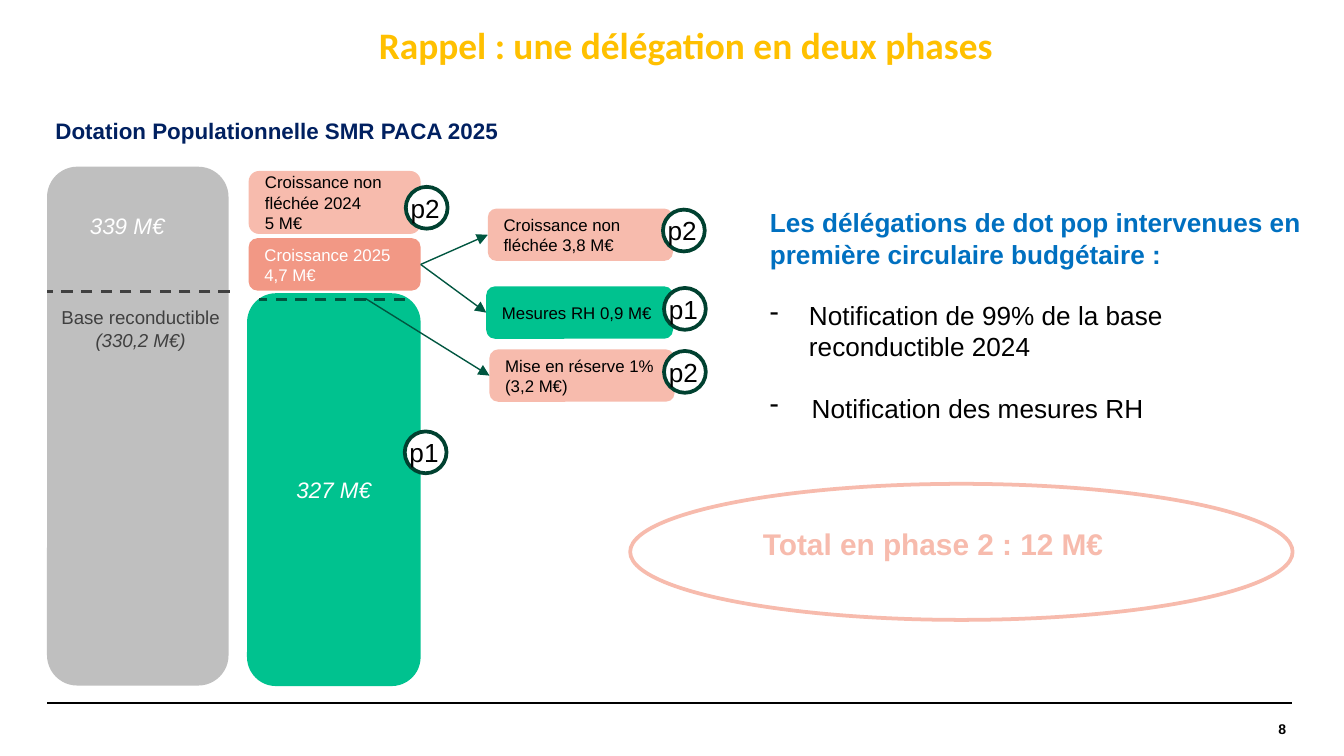
from lxml import etree
from pptx import Presentation
from pptx.dml.color import RGBColor
from pptx.enum import dml, shapes, text
from pptx.oxml.ns import qn
from pptx.util import Cm, Pt

THEME = {
    "grey": "BFBFBF", "green": "00C28F", "coral": "F29885", "salmon": "F7BBAD",
    "white": "FFFFFF", "black": "000000", "dark": "404040", "gold": "FFC000",
    "navy": "002060", "blue": "0070C0", "ring": "004130", "arrow": "005640",
    "title": 20, "total": 16, "body": 14, "heading": 12, "note": 10,
    "label": 9, "number": 7.5, "font": "Arial", "title_font": "Calibri",
}
LEFT, CENTER, RIGHT, JUSTIFY = (
    text.PP_ALIGN.LEFT, text.PP_ALIGN.CENTER, text.PP_ALIGN.RIGHT, text.PP_ALIGN.JUSTIFY)
TOP, MIDDLE = text.MSO_ANCHOR.TOP, text.MSO_ANCHOR.MIDDLE

BLOCKS = {
    "total": ((0.89, 3.15, 3.43, 9.8), "grey", [], {}),
    "base": ((4.67, 5.54, 3.28, 7.42), "green", ["327 M€"],
             {"size": "heading", "color": "white", "italic": True, "align": CENTER}),
    "growth_2025": ((4.7, 4.5, 3.25, 0.99), "coral", ["Croissance 2025 4,7 M€"],
                    {"color": "white"}),
    "growth_2024": ((4.7, 3.23, 3.25, 1.19), "salmon",
                    ["Croissance non fléchée 2024", "5 M€"], {}),
    "reserve": ((9.25, 6.6, 3.5, 0.99), "salmon", ["Mise en réserve 1% (3,2 M€)"], {}),
    "staff": ((9.19, 5.41, 3.53, 0.99), "green", ["Mesures RH 0,9 M€"], {}),
    "unassigned": ((9.22, 3.94, 3.5, 0.99), "salmon", ["Croissance non fléchée 3,8 M€"], {}),
}
BADGES = [("p1", 7.65, 8.15), ("p1", 12.55, 5.44), ("p2", 12.53, 3.96),
          ("p2", 7.67, 3.53), ("p2", 12.55, 6.63)]
BADGE_SIZE = 0.79
ARROWS = [("growth_2025", "unassigned"), ("growth_2025", "staff"), (None, "reserve")]
RESERVE_START = (6.91, 5.64)
RULES = [((0.89, 13.28), (24.41, 13.28), "black", 0.8, False),
         ((4.34, 5.51), (0.89, 5.51), "dark", 1.5, True),
         ((7.65, 5.66), (4.9, 5.66), "arrow", 1.5, True)]
TEXTS = [
    ((6.91, 0.3, 17.4, 1.12), ["Rappel : une délégation en deux phases"],
     {"size": "title", "font": "title_font", "color": "gold", "bold": True, "align": JUSTIFY}),
    ((0.89, 2.21, 8.69, 0.51), ["Dotation Populationnelle SMR PACA 2025"],
     {"size": "heading", "color": "navy", "bold": True, "align": CENTER, "inset": 0}),
    ((1.45, 3.89, 2.03, 0.76), ["339 M€"],
     {"size": "heading", "color": "white", "italic": True}),
    ((14.17, 9.8, 10.21, 0.94), ["Total en phase 2 : 12 M€"],
     {"size": "total", "color": "salmon", "bold": True}),
    ((20.55, 13.28, 3.76, 0.99), ["8"],
     {"size": "number", "bold": True, "align": RIGHT, "inset": 0, "anchor": MIDDLE}),
]
BASE_NOTE = ((0.89, 5.66, 3.53, 1.12), ["Base reconductible", "(330,2 M€)"])
MESSAGE = ((14.3, 3.78, 10.57, 4.45), [
    "Les délégations de dot pop intervenues en première circulaire budgétaire :",
    "Notification de 99% de la base reconductible 2024",
    "Notification des mesures RH"])
BULLET_INDENTS = [0.74, 0.79]
ELLIPSE = (11.91, 9.14, 12.52, 2.57)


def rgb(name):
    return RGBColor.from_string(THEME[name])


def style_font(font, size="label", color="black", face="font", bold=False, italic=False):
    values = {"name": THEME[face], "size": Pt(THEME[size]), "bold": bold, "italic": italic}
    for name, value in values.items():
        setattr(font, name, value)
    font.color.rgb = rgb(color)


def write(box, lines, align=LEFT, anchor=TOP, inset=None, font="font", **style):
    frame = box.text_frame
    frame.word_wrap = True
    frame.vertical_anchor = anchor
    if inset is not None:
        for side in ("left", "top", "right", "bottom"):
            setattr(frame, f"margin_{side}", Cm(inset))
    for index, line in enumerate(lines):
        para = frame.paragraphs[0] if index == 0 else frame.add_paragraph()
        para.alignment = align
        span = para.add_run()
        span.text = line
        style_font(span.font, face=font, **style)
    return frame.paragraphs


def add_text(page, area, lines, **style):
    return write(page.shapes.add_textbox(*map(Cm, area)), lines, **style)


def add_box(page, kind, area, fill=None, outline=None):
    box = page.shapes.add_shape(kind, *map(Cm, area))
    box.shadow.inherit = False
    if fill:
        box.fill.solid()
        box.fill.fore_color.rgb = rgb(fill)
    else:
        box.fill.background()
    if outline:
        box.line.color.rgb = rgb(outline)
        box.line.width = Pt(2)
    else:
        box.line.fill.background()
    return box


def add_line(page, start, end, color, width, dashed=False, arrow=False):
    line = page.shapes.add_connector(shapes.MSO_CONNECTOR.STRAIGHT, *map(Cm, start + end))
    line.line.color.rgb = rgb(color)
    line.line.width = Pt(width)
    if dashed:
        line.line.dash_style = dml.MSO_LINE.DASH
    if arrow:
        etree.SubElement(line.line._get_or_add_ln(), qn("a:tailEnd"), type="triangle")
    etree.SubElement(line._element.spPr, qn("a:effectLst"))
    return line


def add_dash(para, indent):
    properties = para._p.get_or_add_pPr()
    properties.set("marL", str(Cm(indent)))
    properties.set("indent", str(-Cm(indent)))
    para.space_before = Pt(16)
    etree.SubElement(properties, qn("a:buChar"), char="-")


def main():
    deck = Presentation()
    deck.slide_width, deck.slide_height = Cm(25.4), Cm(14.28)
    page = deck.slides.add_slide(deck.slide_layouts[6])

    boxes = {}
    for name, (area, fill, lines, style) in BLOCKS.items():
        boxes[name] = add_box(page, shapes.MSO_SHAPE.ROUNDED_RECTANGLE, area, fill)
        write(boxes[name], lines, anchor=MIDDLE, **style)

    for source, target in ARROWS:
        line = add_line(page, RESERVE_START, RESERVE_START, "arrow", 0.75, arrow=True)
        if source:
            line.begin_connect(boxes[source], 3)
        line.end_connect(boxes[target], 1)
    for rule in RULES:
        add_line(page, *rule)

    for label, left, top in BADGES:
        add_box(page, shapes.MSO_SHAPE.OVAL, (left, top, BADGE_SIZE, BADGE_SIZE), "white", "ring")
        add_text(page, (left - 0.16, top - 0.03, 1.19, 0.86), [label], size="body")

    add_box(page, shapes.MSO_SHAPE.OVAL, ELLIPSE, outline="salmon")
    for area, lines, style in TEXTS:
        add_text(page, area, lines, **style)

    note = add_text(page, *BASE_NOTE, size="note", color="dark", align=CENTER)
    note[1].runs[0].font.italic = True

    intro, *points = add_text(page, *MESSAGE, size="body")
    style_font(intro.runs[0].font, "body", "blue", bold=True)
    for para, indent in zip(points, BULLET_INDENTS):
        add_dash(para, indent)

    deck.save("out.pptx")


if __name__ == "__main__":
    main()
